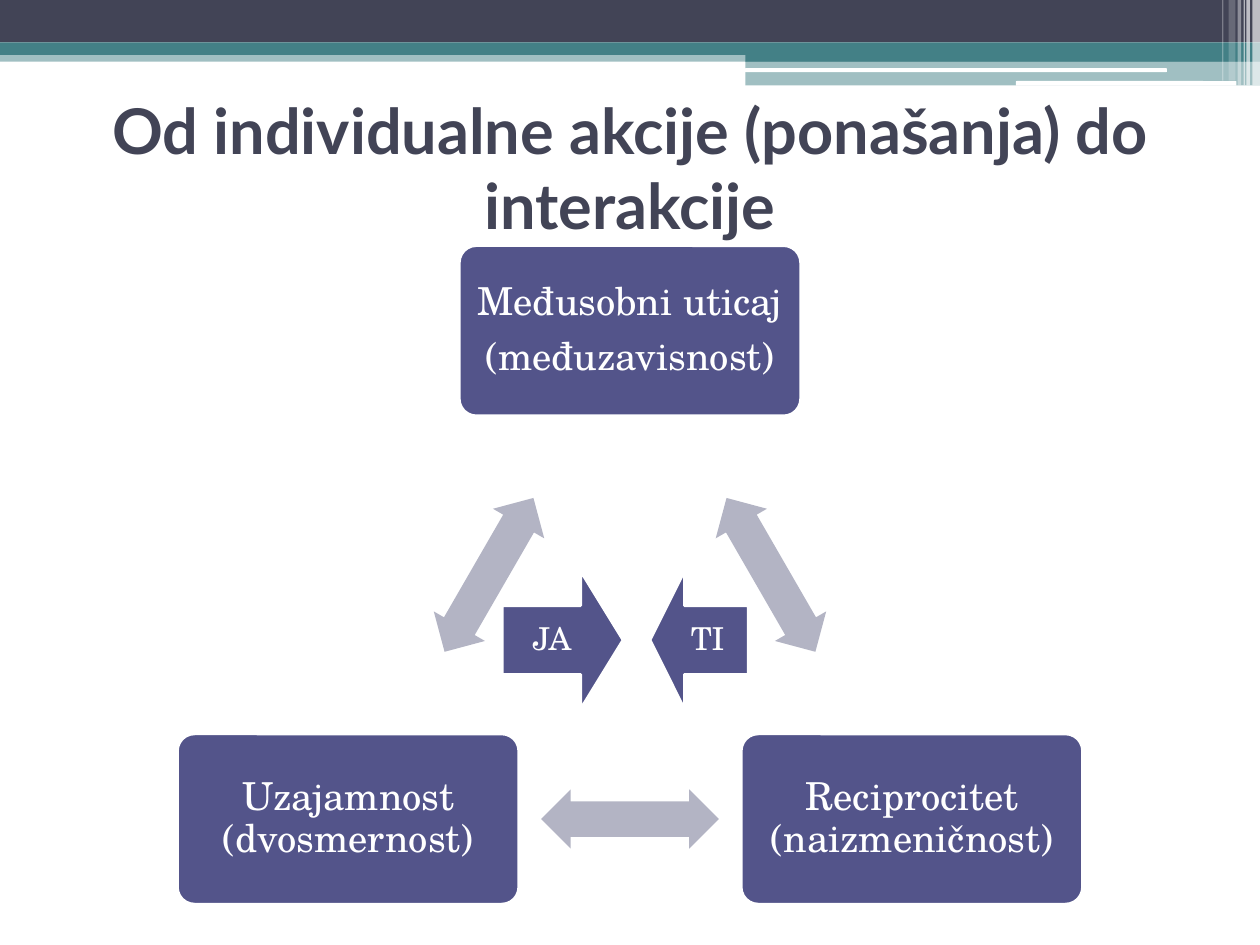
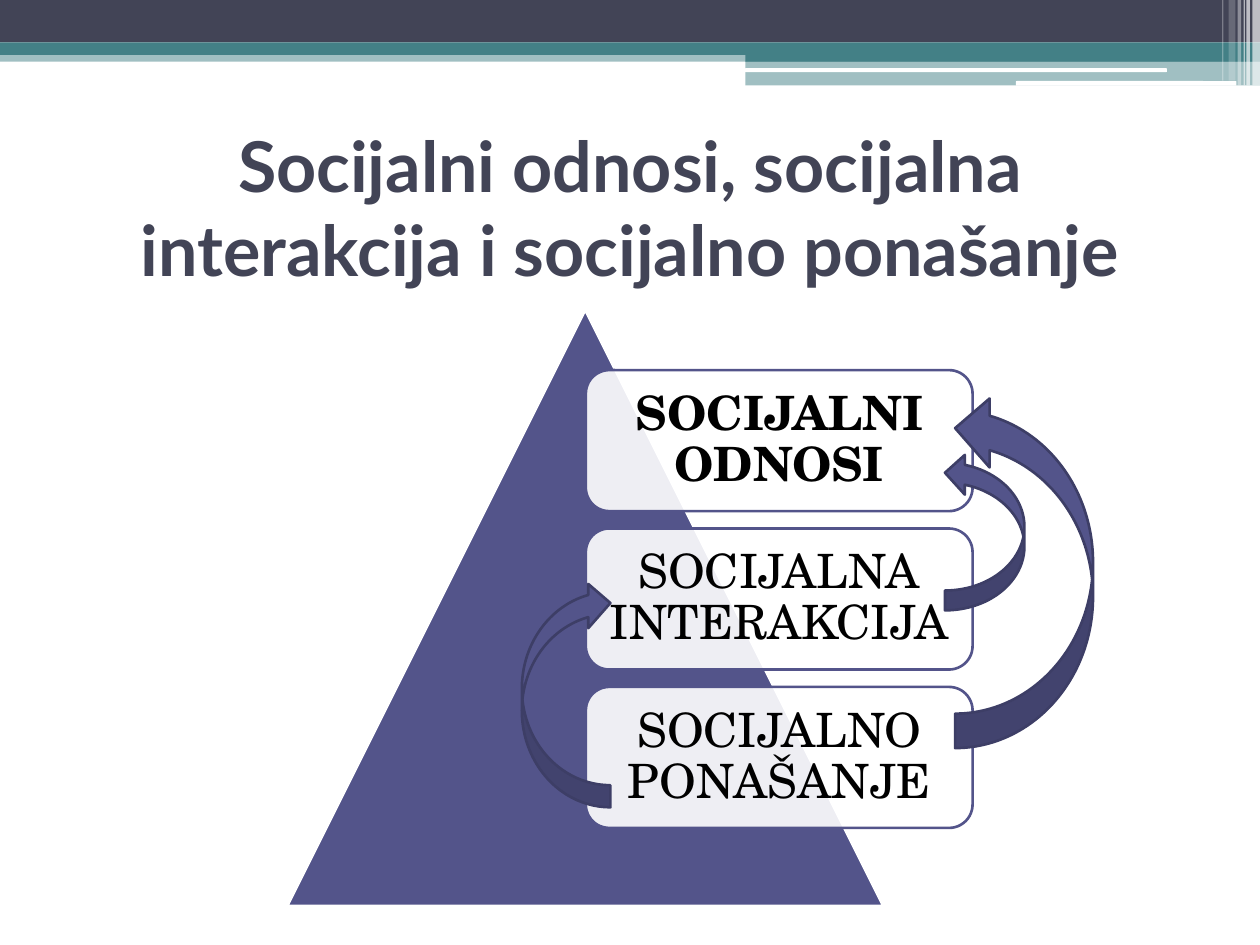
"""Build two slides on social interaction, behaviour and relations."""
from math import cos, radians, sin
from lxml.etree import SubElement
from pptx import Presentation
from pptx.dml.color import RGBColor
from pptx.enum.shapes import MSO_SHAPE
from pptx.enum.text import MSO_ANCHOR, MSO_AUTO_SIZE, PP_ALIGN
from pptx.oxml.ns import qn
from pptx.util import Pt

WHITE = RGBColor(0xFF, 0xFF, 0xFF)
BLACK = RGBColor(0, 0, 0)
SLATE = RGBColor(0x42, 0x44, 0x56)
TEAL = RGBColor(0x43, 0x80, 0x86)
INDIGO = RGBColor(0x53, 0x54, 0x8A)
DARK_INDIGO = RGBColor(0x3D, 0x3E, 0x66)
LAVENDER = RGBColor(0xB3, 0xB4, 0xC4)
TITLE_FONT, BODY_FONT = "Lato", "TeX Gyre Schola"

BANDS = [
    (MSO_SHAPE.RECTANGLE, (0, 28.8, 720, 6.5), TEAL, 50),
    (MSO_SHAPE.RECTANGLE, (0, 0, 720, 24.3), SLATE, 100),
    (MSO_SHAPE.RECTANGLE, (0, 24.3, 720, 7.1), TEAL, 100),
    (MSO_SHAPE.RECTANGLE, (426, 28.1, 294, 7.2), TEAL, 100),
    (MSO_SHAPE.RECTANGLE, (426, 34.8, 294, 14), TEAL, 50),
    (MSO_SHAPE.ROUNDED_RECTANGLE, (425.6, 39, 241.2, 2.2), WHITE, 100),
    (MSO_SHAPE.ROUNDED_RECTANGLE, (580.5, 46.3, 126, 2.7), WHITE, 100),
]
STRIPES = [
    (715.7, 4.3, 48.8, 65), (712.2, 2, 48.8, 65), (710.7, 0.7, 48.8, 60),
    (707.2, 2, 48.8, 40), (702, 4, 46.1, 20), (698.4, 0.7, 46.1, 30),
]

CYCLE_TITLE = "Od individualne akcije (ponašanja) do interakcije"
CYCLE_NODES = ["Međusobni uticaj\n(međuzavisnost)", "Reciprocitet (naizmeničnost)",
               "Uzajamnost (dvosmernost)"]
CYCLE_CENTRE, CYCLE_RADIUS = (360, 375), 186
NODE_SIZE, LINK_SIZE = (195, 97.2), (101.5, 33.8)
PERSONS = [
    ("JA", MSO_SHAPE.RIGHT_ARROW, (287, 326.5, 69, 78.5)),
    ("TI", MSO_SHAPE.LEFT_ARROW, (371.5, 326.5, 56, 78.5)),
]

PYRAMID_TITLE = "Socijalni odnosi, socijalna interakcija i socijalno ponašanje"
LEVELS = ["SOCIJALNI ODNOSI", "SOCIJALNA INTERAKCIJA", "SOCIJALNO PONAŠANJE"]
LEVEL_LEFT, LEVEL_TOP, LEVEL_PITCH = 334.8, 211.5, 90.5
LEVEL_SIZE = (221, 80.6)
CURVED_ARROWS = [
    (MSO_SHAPE.CURVED_LEFT_ARROW, (540, 258.8, 45.4, 90), 0, True),
    (MSO_SHAPE.CURVED_LEFT_ARROW, (545.8, 225, 78.8, 202.5), 0, True),
    (MSO_SHAPE.CURVED_DOWN_ARROW, (258.8, 371.3, 129.4, 50.6), 270, False),
]


def add_figure(page, kind, frame, fill, line=None, opacity=100, adjust=()):
    shape = page.shapes.add_shape(kind, *map(Pt, frame))
    shape.shadow.inherit = False
    shape.fill.solid()
    shape.fill.fore_color.rgb = fill
    if opacity < 100:
        colour = shape.element.spPr.find(f"{qn('a:solidFill')}/{qn('a:srgbClr')}")
        SubElement(colour, qn("a:alpha"), val=str(opacity * 1000))
    if line is None:
        shape.line.fill.background()
    else:
        shape.line.color.rgb = line
        shape.line.width = Pt(1.5)
    for index, value in enumerate(adjust):
        shape.adjustments[index] = value
    return shape


def write(shape, text, size, colour, font=BODY_FONT, bold=False):
    frame = shape.text_frame
    frame.text = text
    frame.word_wrap = True
    frame.auto_size = MSO_AUTO_SIZE.NONE
    frame.vertical_anchor = MSO_ANCHOR.MIDDLE
    for para in frame.paragraphs:
        para.alignment = PP_ALIGN.CENTER
        for span in para.runs:
            span.font.name = font
            span.font.size = Pt(size)
            span.font.bold = bold
            span.font.color.rgb = colour


def label(shape, text, size, colour, inset, bold=False):
    write(shape, text, size, colour, bold=bold)
    frame = shape.text_frame
    frame.margin_left = frame.margin_right = Pt(inset)
    frame.margin_top = frame.margin_bottom = Pt(inset)
    for para in frame.paragraphs:
        para.line_spacing = 0.9
        para.space_after = Pt(round(size * 0.35, 1))


def add_page(deck, title, frame, size):
    page = deck.slides.add_slide(deck.slide_layouts[5])
    for kind, place, fill, opacity in BANDS:
        add_figure(page, kind, place, fill, opacity=opacity)
    for left, width, height, opacity in STRIPES:
        add_figure(page, MSO_SHAPE.RECTANGLE, (left, 0, width, height), WHITE, opacity=opacity)
    heading = page.shapes.title
    heading.left, heading.top, heading.width, heading.height = map(Pt, frame)
    write(heading, title, size, SLATE, TITLE_FONT, True)
    return page


def frame_around(angle, radius, size):
    x = CYCLE_CENTRE[0] + radius * cos(radians(angle))
    y = CYCLE_CENTRE[1] + radius * sin(radians(angle))
    return x - size[0] / 2, y - size[1] / 2, *size


def add_cycle(deck):
    page = add_page(deck, CYCLE_TITLE, (36, 44.6, 648, 101.5), 36)
    for index, text in enumerate(CYCLE_NODES):
        angle = 120 * index - 90
        node = add_figure(page, MSO_SHAPE.ROUNDED_RECTANGLE,
                          frame_around(angle, CYCLE_RADIUS, NODE_SIZE),
                          INDIGO, WHITE, adjust=(0.1,))
        label(node, text, 22, WHITE, 6.5)
        link = add_figure(page, MSO_SHAPE.LEFT_RIGHT_ARROW,
                          frame_around(angle + 60, CYCLE_RADIUS / 2, LINK_SIZE),
                          LAVENDER, adjust=(0.6, 0.5))
        link.rotation = 60 + 120 * index
    for text, kind, frame in PERSONS:
        person = add_figure(page, kind, frame, INDIGO, WHITE, adjust=(0.5, 0.35))
        label(person, text, 18, WHITE, 10)


def add_pyramid(deck):
    page = add_page(deck, PYRAMID_TITLE, (36, 62, 648, 112.5), 40)
    add_figure(page, MSO_SHAPE.ISOSCELES_TRIANGLE, (164.2, 177.2, 340.5, 340.5), INDIGO, WHITE)
    for index, text in enumerate(LEVELS):
        frame = (LEVEL_LEFT, LEVEL_TOP + index * LEVEL_PITCH, *LEVEL_SIZE)
        level = add_figure(page, MSO_SHAPE.ROUNDED_RECTANGLE, frame, WHITE, INDIGO, 90)
        label(level, text, 27, BLACK, 7.9, bold=index == 0)
    for kind, frame, rotation, flipped in CURVED_ARROWS:
        arrow = add_figure(page, kind, frame, INDIGO, DARK_INDIGO)
        arrow.rotation = rotation
        if flipped:
            arrow.element.spPr.find(qn("a:xfrm")).set("flipV", "1")


def main():
    deck = Presentation()
    deck.slide_width, deck.slide_height = Pt(720), Pt(540)
    add_cycle(deck)
    add_pyramid(deck)
    deck.save("out.pptx")


if __name__ == "__main__":
    main()
